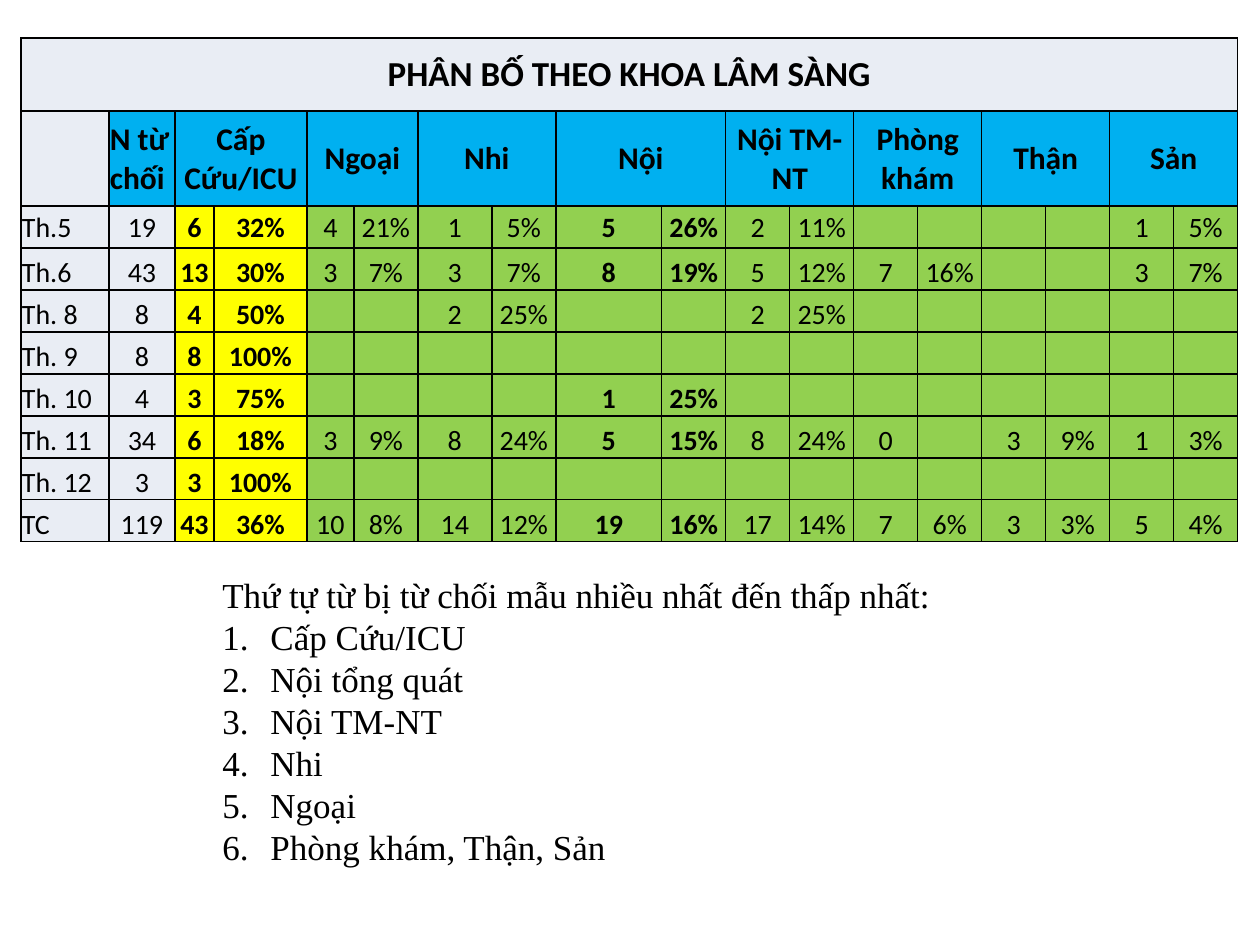
from lxml import etree
from pptx import Presentation
from pptx.dml.color import RGBColor
from pptx.enum.text import MSO_ANCHOR, MSO_AUTO_SIZE, PP_ALIGN
from pptx.oxml.ns import qn
from pptx.util import Pt

LEFT, CENTER = PP_ALIGN.LEFT, PP_ALIGN.CENTER
MIDDLE, BOTTOM = MSO_ANCHOR.MIDDLE, MSO_ANCHOR.BOTTOM
GROW = MSO_AUTO_SIZE.SHAPE_TO_FIT_TEXT

PX = 914400 // 126
COLORS = {
    "text": "000000",
    "border": "000000",
    "pale": "E9EDF4",
    "header": "00B0F0",
    "emergency": "FFFF00",
    "department": "92D050",
}

TITLE = "PHÂN BỐ THEO KHOA LÂM SÀNG"
DEPARTMENTS = ["Cấp Cứu/ICU", "Ngoại", "Nhi", "Nội", "Nội TM-NT",
               "Phòng khám", "Thận", "Sản"]
BOLD_DEPARTMENTS = {"Cấp Cứu/ICU", "Nội"}
# Month, rejected samples, then the count of each department
MONTHS = [
    ("Th.5", 19, [6, 4, 1, 5, 2, None, None, 1]),
    ("Th.6", 43, [13, 3, 3, 8, 5, 7, None, 3]),
    ("Th. 8", 8, [4, None, 2, None, 2, None, None, None]),
    ("Th. 9", 8, [8] + [None] * 7),
    ("Th. 10", 4, [3, None, None, 1, None, None, None, None]),
    ("Th. 11", 34, [6, 3, 8, 5, 8, 0, 3, 1]),
    ("Th. 12", 3, [3] + [None] * 7),
    ("TC", 119, [43, 10, 14, 19, 17, 7, 3, 5]),
]
COLUMN_WIDTHS = [88, 66, 39, 93, 47, 64, 74, 64, 106] + [64] * 9
ROW_HEIGHTS = [73, 95] + [42] * len(MONTHS)

RANKING_INTRO = "Thứ tự từ bị từ chối mẫu nhiều nhất đến thấp nhất:"
RANKING = ["Cấp Cứu/ICU", "Nội tổng quát", "Nội TM-NT", "Nhi", "Ngoại",
           "Phòng khám, Thận, Sản"]


def px(length):
    return length * PX


def write(paragraph, text, size=16, bold=False, align=LEFT, font="Calibri"):
    paragraph.alignment = align
    run = paragraph.add_run()
    run.text = text
    run.font.name = font
    run.font.size = Pt(size)
    run.font.bold = bold
    run.font.color.rgb = RGBColor.from_string(COLORS["text"])


def add_borders(cell):
    properties = cell._tc.get_or_add_tcPr()
    for side in ("a:lnL", "a:lnR", "a:lnT", "a:lnB"):
        line = etree.SubElement(properties, qn(side), w=str(Pt(1)))
        fill = etree.SubElement(line, qn("a:solidFill"))
        etree.SubElement(fill, qn("a:srgbClr"), val=COLORS["border"])


def fill_cell(cell, text, color, anchor=MIDDLE, **text_format):
    cell.margin_left = cell.margin_right = cell.margin_top = px(1)
    cell.margin_bottom = 0
    cell.vertical_anchor = anchor
    cell.fill.solid()
    cell.fill.fore_color.rgb = RGBColor.from_string(COLORS[color])
    if text:
        write(cell.text_frame.paragraphs[0], text, **text_format)


def fill_headers(table):
    table.cell(0, 0).merge(table.cell(0, len(COLUMN_WIDTHS) - 1))
    fill_cell(table.cell(0, 0), TITLE, "pale", size=20, bold=True, align=CENTER)
    fill_cell(table.cell(1, 0), "", "pale")
    fill_cell(table.cell(1, 1), "N từ chối", "header", size=18, bold=True)
    for index, department in enumerate(DEPARTMENTS):
        column = 2 + 2 * index
        table.cell(1, column).merge(table.cell(1, column + 1))
        fill_cell(table.cell(1, column), department, "header",
                  size=18, bold=True, align=CENTER)


def fill_month(table, row, month, total, counts):
    anchor = MIDDLE if row == 2 else BOTTOM
    fill_cell(table.cell(row, 0), month, "pale", anchor)
    fill_cell(table.cell(row, 1), str(total), "pale", anchor, align=CENTER)
    for index, (department, count) in enumerate(zip(DEPARTMENTS, counts)):
        color = "department" if index else "emergency"
        number = "" if count is None else str(count)
        share = f"{count / total:.0%}" if count else ""
        for offset, text in enumerate((number, share)):
            fill_cell(table.cell(row, 2 + 2 * index + offset), text, color,
                      anchor, bold=department in BOLD_DEPARTMENTS, align=CENTER)


def add_distribution_table(slide):
    table = slide.shapes.add_table(
        len(ROW_HEIGHTS), len(COLUMN_WIDTHS), px(21), px(38),
        px(sum(COLUMN_WIDTHS)), px(sum(ROW_HEIGHTS))).table
    table.first_row = table.horz_banding = False
    for column, width in zip(table.columns, COLUMN_WIDTHS):
        column.width = px(width)
    for row, height in zip(table.rows, ROW_HEIGHTS):
        row.height = px(height)
    for cell in table.iter_cells():
        add_borders(cell)
    fill_headers(table)
    for row, month in enumerate(MONTHS, start=2):
        fill_month(table, row, *month)


def number_paragraph(paragraph, indent):
    properties = paragraph._p.get_or_add_pPr()
    properties.set("marL", str(px(indent)))
    properties.set("indent", str(-px(indent)))
    etree.SubElement(properties, qn("a:buFont"), typeface="+mj-lt")
    etree.SubElement(properties, qn("a:buAutoNum"), type="arabicPeriod")


def add_ranking(slide):
    frame = slide.shapes.add_textbox(px(210), px(567), px(766), px(310)).text_frame
    frame.word_wrap = True
    frame.auto_size = GROW
    text_format = {"size": 20, "font": "Times New Roman"}
    write(frame.paragraphs[0], RANKING_INTRO, **text_format)
    for department in RANKING:
        paragraph = frame.add_paragraph()
        number_paragraph(paragraph, 48)
        write(paragraph, department, **text_format)


def main():
    presentation = Presentation()
    presentation.slide_width, presentation.slide_height = px(1260), px(945)
    slide = presentation.slides.add_slide(presentation.slide_layouts[6])
    add_distribution_table(slide)
    add_ranking(slide)
    presentation.save("out.pptx")


if __name__ == "__main__":
    main()
